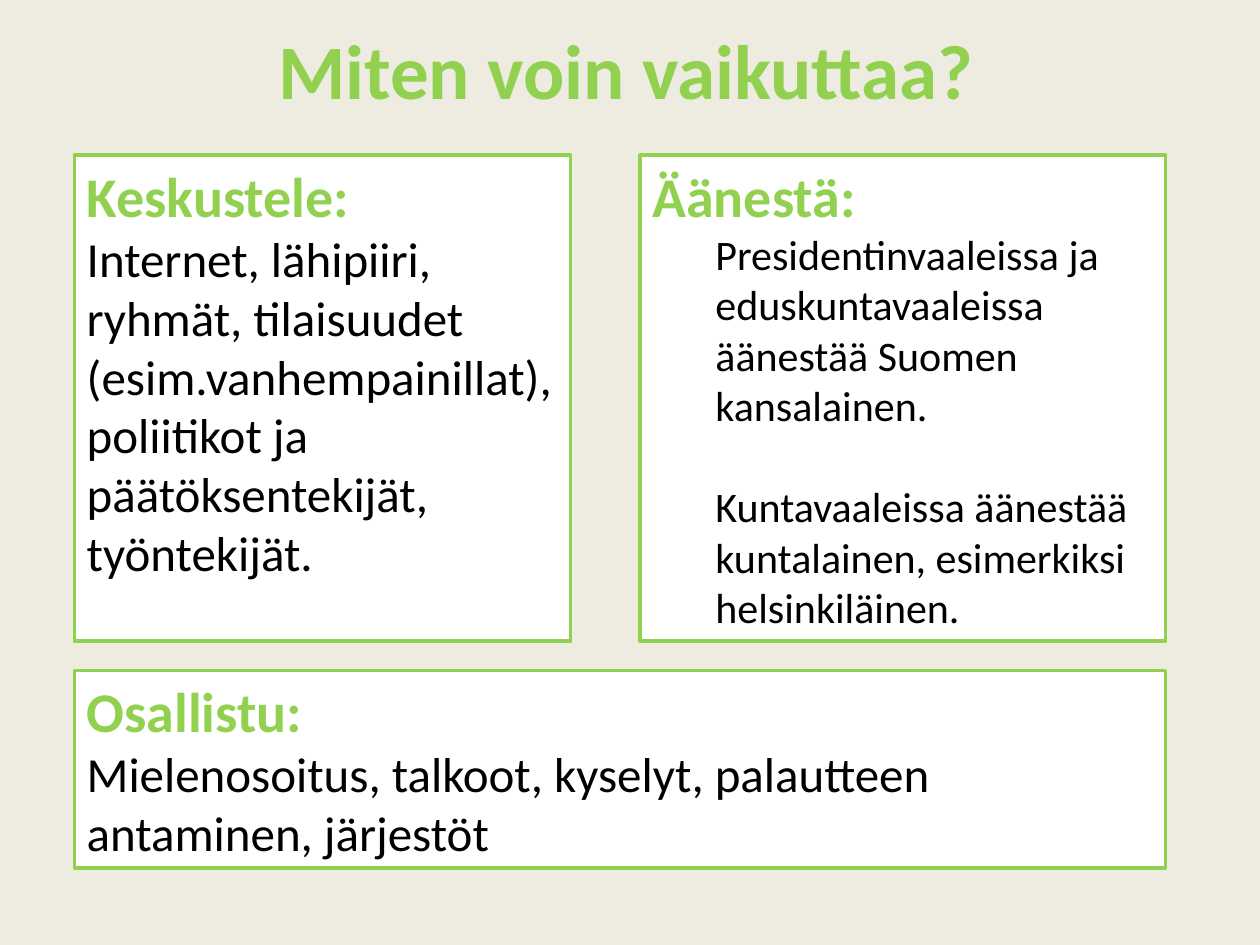
"""Build the slide on ways a citizen can have an influence."""
import pptx
import pptx.dml.color
import pptx.enum.shapes
import pptx.enum.text
import pptx.util

Inches = pptx.util.Inches
Pt = pptx.util.Pt
COLORS = {"background": "EEECE1", "green": "92D050", "panel": "FFFFFF", "body": "000000"}


def rgb(name):
    return pptx.dml.color.RGBColor.from_string(COLORS[name])


def write(para, text, size, color, bold):
    para.text = text
    para.font.name = "Calibri"
    para.font.size = Pt(size)
    para.font.bold = bold
    para.font.color.rgb = rgb(color)


deck = pptx.Presentation()
deck.slide_width = Inches(10)
deck.slide_height = Inches(7.5)
page = deck.slides.add_slide(deck.slide_layouts[6])
page.background.fill.solid()
page.background.fill.fore_color.rgb = rgb("background")

title = page.shapes.add_textbox(Inches(0.47), Inches(0), Inches(9), Inches(1.09))
title.text_frame.word_wrap = True
title.text_frame.vertical_anchor = pptx.enum.text.MSO_ANCHOR.MIDDLE
write(title.text_frame.paragraphs[0], "Miten voin vaikuttaa?", 44, "green", True)
title.text_frame.paragraphs[0].alignment = pptx.enum.text.PP_ALIGN.CENTER

panels = [
    ((0.59, 1.23, 3.94, 3.86), "Keskustele:", 28, 0, [
        "Internet, lähipiiri, ryhmät, tilaisuudet (esim.vanhempainillat), "
        "poliitikot ja päätöksentekijät, työntekijät."]),
    ((0.59, 5.32, 8.66, 1.57), "Osallistu:", 28, 0, [
        "Mielenosoitus, talkoot, kyselyt, palautteen antaminen, järjestöt"]),
    ((5.08, 1.23, 4.17, 3.86), "Äänestä:", 24, 1, [
        "Presidentinvaaleissa ja eduskuntavaaleissa äänestää Suomen kansalainen.",
        "Kuntavaaleissa äänestää kuntalainen, esimerkiksi helsinkiläinen."]),
]

for place, heading, size, level, texts in panels:
    box = page.shapes.add_shape(
        pptx.enum.shapes.MSO_SHAPE.RECTANGLE, *[Inches(length) for length in place])
    box.shadow.inherit = False
    box.fill.solid()
    box.fill.fore_color.rgb = rgb("panel")
    box.line.color.rgb = rgb("green")
    box.line.width = Pt(2)
    frame = box.text_frame
    frame.word_wrap = True
    frame.vertical_anchor = pptx.enum.text.MSO_ANCHOR.TOP
    write(frame.paragraphs[0], heading, 32, "green", True)
    for index, text in enumerate(texts):
        para = frame.add_paragraph()
        write(para, text, size, "body", False)
        para.level = level
        if index:
            para.space_before = Pt(29)
    for para in frame.paragraphs:
        para.alignment = pptx.enum.text.PP_ALIGN.LEFT

deck.save("out.pptx")
